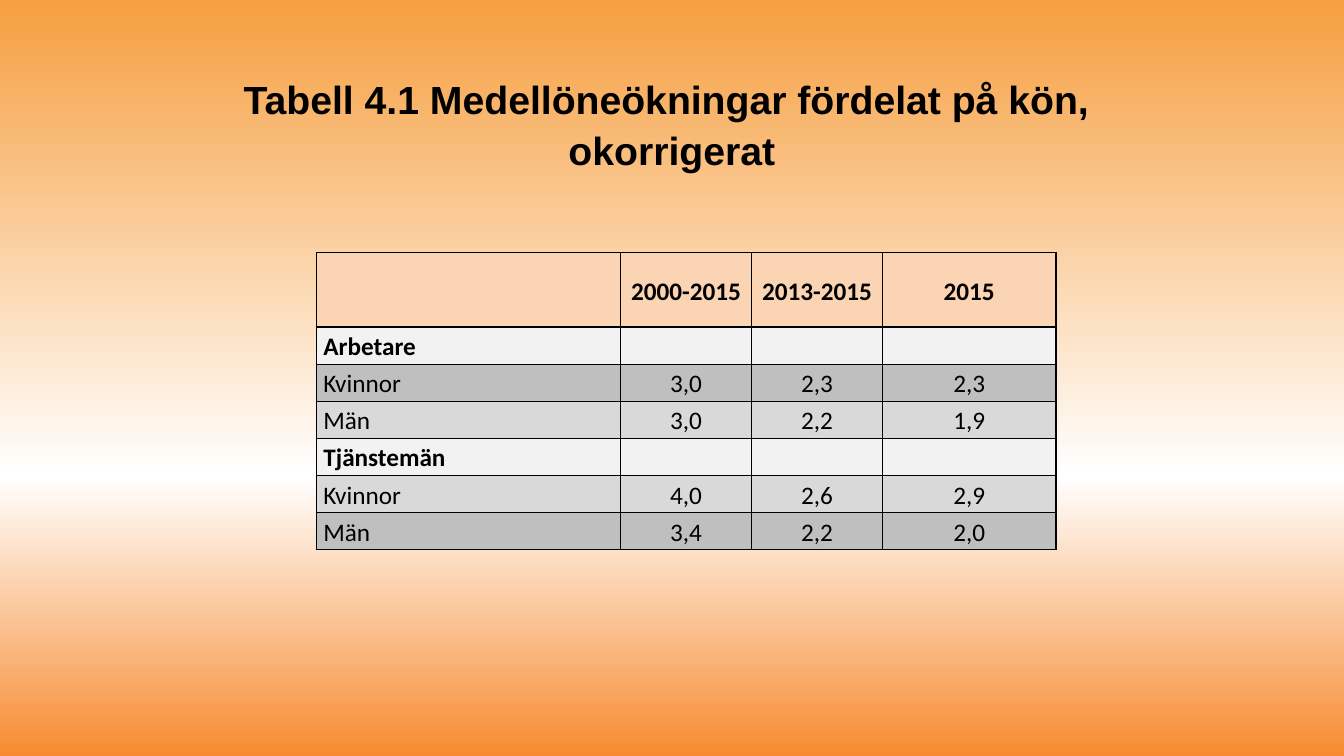
from copy import deepcopy

from lxml import etree
from pptx import Presentation
from pptx.dml.color import RGBColor
from pptx.enum.text import MSO_ANCHOR, PP_ALIGN
from pptx.oxml.ns import qn
from pptx.util import Cm, Pt

CENTER, JUSTIFY = PP_ALIGN.CENTER, PP_ALIGN.JUSTIFY
TOP, MIDDLE = MSO_ANCHOR.TOP, MSO_ANCHOR.MIDDLE

TITLE_LINES = ["Tabell 4.1 Medellöneökningar fördelat på kön, ", "okorrigerat"]
PEACH, PALE, LIGHT, DARK = "FBD4B4", "F2F2F2", "D9D9D9", "BFBFBF"
BLACK = "000000"
# Row fill, bold, cell texts
WAGE_ROWS = [
    (PEACH, True, ["", "2000-2015", "2013-2015", "2015"]),
    (PALE, True, ["Arbetare", "", "", ""]),
    (DARK, False, ["Kvinnor", "3,0", "2,3", "2,3"]),
    (LIGHT, False, ["Män", "3,0", "2,2", "1,9"]),
    (PALE, True, ["Tjänstemän", "", "", ""]),
    (LIGHT, False, ["Kvinnor", "4,0", "2,6", "2,9"]),
    (DARK, False, ["Män", "3,4", "2,2", "2,0"]),
]
COLUMN_WIDTHS = [7.67, 3.3, 3.3, 4.37]
HEADER_HEIGHT, ROW_HEIGHT = 1.87, 0.935
BACKGROUND_STOPS = [(0, "F78B31"), (0.37, "FFFFFF"), (1, "F69F40")]


def color(hex_string):
    return RGBColor.from_string(hex_string)


def add_run(paragraph, text, font_name, size, bold):
    run = paragraph.add_run()
    run.text = text
    run.font.name = font_name
    run.font.size = Pt(size)
    run.font.bold = bold
    run.font.color.rgb = color(BLACK)


def paint_background(slide):
    fill = slide.background.fill
    fill.gradient()
    fill.gradient_angle = 90
    stop_list = slide.element.xpath(".//a:gsLst")[0]
    stop_list.append(deepcopy(stop_list[0]))
    for stop, (position, hex_string) in zip(fill.gradient_stops, BACKGROUND_STOPS):
        stop.position = position
        stop.color.rgb = color(hex_string)


def add_title(slide):
    box = slide.shapes.add_textbox(Cm(3.18), Cm(1.7), Cm(27.5), Cm(5.28))
    frame = box.text_frame
    frame.word_wrap = True
    frame.vertical_anchor = TOP
    paragraph = frame.paragraphs[0]
    paragraph.alignment = CENTER
    paragraph.line_spacing = 1.07
    for index, line in enumerate(TITLE_LINES):
        if index:
            paragraph.add_line_break()
        add_run(paragraph, line, "Arial", 28, True)


def add_borders(cell):
    properties = cell._tc.get_or_add_tcPr()
    for side in ("a:lnL", "a:lnR", "a:lnT", "a:lnB"):
        line = etree.SubElement(properties, qn(side), w=str(Pt(1)))
        solid = etree.SubElement(line, qn("a:solidFill"))
        etree.SubElement(solid, qn("a:srgbClr"), val=BLACK)


def fill_cell(cell, text, fill_color, bold, alignment, anchor):
    add_borders(cell)
    cell.fill.solid()
    cell.fill.fore_color.rgb = color(fill_color)
    cell.margin_left = cell.margin_right = Cm(0.18)
    cell.margin_top = cell.margin_bottom = 0
    cell.vertical_anchor = anchor
    paragraph = cell.text_frame.paragraphs[0]
    paragraph.alignment = alignment
    paragraph.line_spacing = 1.15
    if text:
        add_run(paragraph, text, "Calibri", 18, bold)


def add_wage_table(slide):
    heights = [HEADER_HEIGHT] + [ROW_HEIGHT] * (len(WAGE_ROWS) - 1)
    table = slide.shapes.add_table(
        len(WAGE_ROWS), len(COLUMN_WIDTHS), Cm(7.97), Cm(6.37),
        Cm(sum(COLUMN_WIDTHS)), Cm(sum(heights))).table
    for column, width in zip(table.columns, COLUMN_WIDTHS):
        column.width = Cm(width)
    for row_index, (fill_color, bold, texts) in enumerate(WAGE_ROWS):
        table.rows[row_index].height = Cm(heights[row_index])
        anchor = TOP if row_index else MIDDLE
        for column_index, text in enumerate(texts):
            alignment = CENTER if column_index else JUSTIFY
            fill_cell(table.cell(row_index, column_index), text,
                      fill_color, bold, alignment, anchor)


def main():
    presentation = Presentation()
    presentation.slide_width = Cm(33.87)
    presentation.slide_height = Cm(19.05)
    slide = presentation.slides.add_slide(presentation.slide_layouts[6])
    paint_background(slide)
    add_title(slide)
    add_wage_table(slide)
    presentation.save("out.pptx")


if __name__ == "__main__":
    main()
